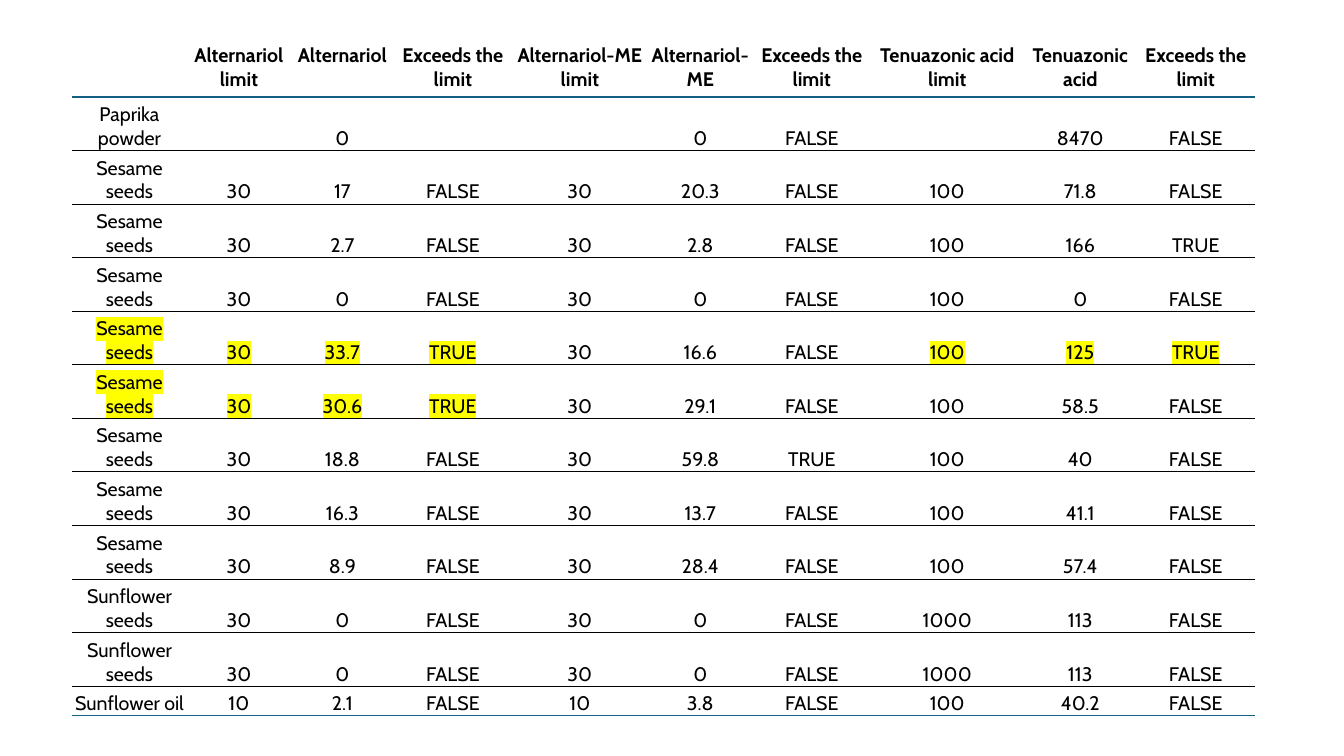
from pptx import Presentation
from pptx.dml.color import RGBColor
from pptx.enum.text import MSO_ANCHOR as Anchor, PP_ALIGN as Align
from pptx.oxml.ns import qn
from pptx.util import Pt
from lxml.etree import Element, SubElement

# Content
HEADERS = ("", "Alternariol limit", "Alternariol", "Exceeds the limit",
           "Alternariol-ME limit", "Alternariol-ME", "Exceeds the limit",
           "Tenuazonic acid limit", "Tenuazonic acid", "Exceeds the limit")
SAMPLES = [
    ("Paprika powder", "", "0", "", "", "0", "FALSE", "", "8470", "FALSE"),
    ("Sesame seeds", "30", "17", "FALSE", "30", "20.3", "FALSE", "100", "71.8", "FALSE"),
    ("Sesame seeds", "30", "2.7", "FALSE", "30", "2.8", "FALSE", "100", "166", "TRUE"),
    ("Sesame seeds", "30", "0", "FALSE", "30", "0", "FALSE", "100", "0", "FALSE"),
    ("Sesame seeds", "30", "33.7", "TRUE", "30", "16.6", "FALSE", "100", "125", "TRUE"),
    ("Sesame seeds", "30", "30.6", "TRUE", "30", "29.1", "FALSE", "100", "58.5", "FALSE"),
    ("Sesame seeds", "30", "18.8", "FALSE", "30", "59.8", "TRUE", "100", "40", "FALSE"),
    ("Sesame seeds", "30", "16.3", "FALSE", "30", "13.7", "FALSE", "100", "41.1", "FALSE"),
    ("Sesame seeds", "30", "8.9", "FALSE", "30", "28.4", "FALSE", "100", "57.4", "FALSE"),
    ("Sunflower seeds", "30", "0", "FALSE", "30", "0", "FALSE", "1000", "113", "FALSE"),
    ("Sunflower seeds", "30", "0", "FALSE", "30", "0", "FALSE", "1000", "113", "FALSE"),
    ("Sunflower oil", "10", "2.1", "FALSE", "10", "3.8", "FALSE", "100", "40.2", "FALSE"),
]
MARKED = {5: (0, 1, 2, 3, 7, 8, 9), 6: (0, 1, 2, 3)}  # row: highlighted columns

# Layout in px
PAGE_WIDTH, PAGE_HEIGHT = 1344, 756
LEFT, TOP, TABLE_HEIGHT, LAST_HEIGHT = 72, 43, 673, 30
COLUMN_WIDTHS = (115, 104, 103, 118, 136, 105, 118, 153, 113, 118)

FONT, BLACK, TEAL, YELLOW = "Cabin", "000000", "156082", "FFFF00"
PLAIN_STYLE = "{2D5ABB26-0587-4C30-8999-92F81FD0307C}"


def px(length):
    return round(length * 914400 / 100.8)


def color(value):
    return RGBColor.from_string(value)


def write(cell, text, bold=False, anchor=Anchor.BOTTOM, mark=None):
    cell.margin_left = cell.margin_right = cell.margin_top = px(1)
    cell.margin_bottom = 0
    cell.vertical_anchor = anchor
    cell.fill.background()
    if not text:
        return
    para = cell.text_frame.paragraphs[0]
    para.alignment = Align.CENTER
    span = para.add_run()
    span.text = text
    font = span.font
    font.name, font.size, font.bold = FONT, Pt(14), bold
    font.color.rgb = color(mark and BLACK or BLACK)
    if mark:
        highlight = Element(qn("a:highlight"))
        SubElement(highlight, qn("a:srgbClr"), val=mark)
        font.fill  # colour element precedes the highlight
        span.font._rPr.find(qn("a:solidFill")).addnext(highlight)


def draw_borders(cell, **edges):
    properties = cell._tc.get_or_add_tcPr()
    for index, (edge, (value, width)) in enumerate(edges.items()):
        line = Element(qn("a:" + edge), w=str(Pt(width)))
        fill = SubElement(line, qn("a:solidFill"))
        SubElement(fill, qn("a:srgbClr"), val=value)
        properties.insert(index, line)


deck = Presentation()
deck.slide_width, deck.slide_height = px(PAGE_WIDTH), px(PAGE_HEIGHT)
page = deck.slides.add_slide(deck.slide_layouts[6])

# Table frame
rows = [HEADERS] + SAMPLES
last = len(rows) - 1
frame = page.shapes.add_table(len(rows), len(HEADERS), px(LEFT), px(TOP),
                              px(sum(COLUMN_WIDTHS)), px(TABLE_HEIGHT))
table = frame.table
table.first_row = table.horz_banding = False
table._tbl.tblPr.find(qn("a:tableStyleId")).text = PLAIN_STYLE
for column, width in zip(table.columns, COLUMN_WIDTHS):
    column.width = px(width)
for index, row in enumerate(table.rows):
    row.height = px(LAST_HEIGHT if index == last else (TABLE_HEIGHT - LAST_HEIGHT) / last)

# Rules between rows: line i lies under row i
rules = [(TEAL, 1.5)] + [(BLACK, 0.25)] * (last - 1) + [(TEAL, 1)]

# Cells
for r, values in enumerate(rows):
    for c, text in enumerate(values):
        cell = table.cell(r, c)
        if r == 0:
            write(cell, text, bold=True, anchor=Anchor.TOP)
            draw_borders(cell, lnB=rules[0])
        else:
            write(cell, text, mark=YELLOW if c in MARKED.get(r, ()) else None)
            draw_borders(cell, lnT=rules[r - 1], lnB=rules[r])

deck.save("out.pptx")
